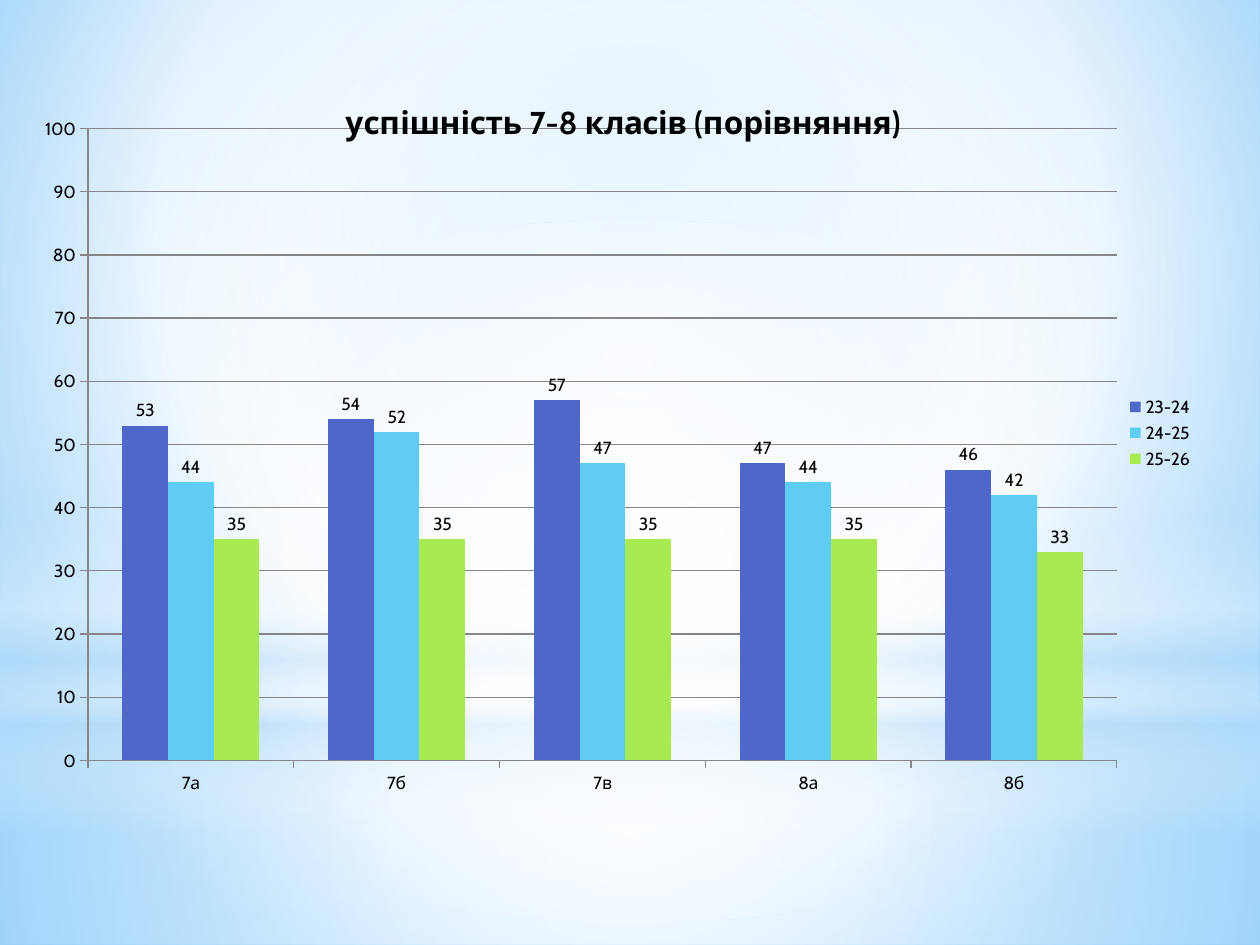
from lxml import etree
from pptx import Presentation
from pptx.chart.data import CategoryChartData
from pptx.dml.color import RGBColor
from pptx.enum.chart import XL_CHART_TYPE, XL_LABEL_POSITION, XL_LEGEND_POSITION, XL_TICK_MARK
from pptx.enum.shapes import MSO_SHAPE
from pptx.oxml import parse_xml
from pptx.oxml.ns import qn
from pptx.util import Cm, Pt

FONT = "Cabin"
COLOURS = {
    "text": "000000", "grid": "868686", "white": "FFFFFF", "haze": "B4DCFA",
    "sky": "9ED5FF", "deep": "5BB9FF",
    "23-24": "4E67C8", "24-25": "5ECCF3", "25-26": "A7EA52",
}
TITLE = "успішність 7-8 класів (порівняння)"
CLASSES = ["7а", "7б", "7в", "8а", "8б"]
RESULTS = {
    "23-24": [53, 54, 57, 47, 46],
    "24-25": [44, 52, 47, 44, 42],
    "25-26": [35, 35, 35, 35, 33],
}

# Gradient stops are (position, colour name, opacity), all in percent.
# A focus is left, top, right, bottom in percent; None means a vertical gradient.
CENTRE = (50, 50, 50, 50)
BACKGROUND = ([(0, "sky", 100), (60, "white", 100), (100, "deep", 100)], (20, 10, 20, 60))
BACKDROP = [  # preset, (left, top, width, height) in cm, stops, focus
    (MSO_SHAPE.RECTANGLE, (0, 14.17, 25.4, 4.88),
     [(0, "white", 91), (37, "white", 76), (100, "haze", 79)], CENTRE),
    (MSO_SHAPE.RECTANGLE, (0, 0, 25.4, 14.17),
     [(0, "white", 89), (48, "white", 62), (100, "haze", 79)], CENTRE),
    (MSO_SHAPE.RECTANGLE, (0, 10.46, 25.4, 6.35),
     [(0, "white", 0), (29, "white", 30), (45, "haze", 40), (55, "white", 26),
      (65, "haze", 60), (100, "white", 0)], None),
    (MSO_SHAPE.OVAL, (0, 4.45, 25.4, 14.17),
     [(0, "white", 100), (56, "white", 0)], CENTRE),
]
CHART_BOX = (0.71, 1.32, 23.6, 14.81)
PLOT_PERCENT = {"x": 4.5, "y": 8.6, "w": 87.9, "h": 86}
TITLE_PERCENT = {"x": 26, "y": 4}


def colour(name):
    return RGBColor.from_string(COLOURS[name])


def apply_gradient(owner, fill, fill_location, stops, focus):
    """Replace the solid fill found at fill_location with a gradient."""
    fill.solid()
    solid = owner.xpath(fill_location + "/a:solidFill")[0]
    gradient = etree.Element(qn("a:gradFill"), rotWithShape="1")
    stop_list = etree.SubElement(gradient, qn("a:gsLst"))
    for position, name, opacity in stops:
        stop = etree.SubElement(stop_list, qn("a:gs"), pos=str(position * 1000))
        tint = etree.SubElement(stop, qn("a:srgbClr"), val=COLOURS[name])
        if opacity < 100:
            etree.SubElement(tint, qn("a:alpha"), val=str(opacity * 1000))
    if focus:
        shade = etree.SubElement(gradient, qn("a:path"), path="circle")
        sides = {side: str(value * 1000) for side, value in zip("ltrb", focus)}
        etree.SubElement(shade, qn("a:fillToRect"), **sides)
    else:
        etree.SubElement(gradient, qn("a:lin"), ang="5400000", scaled="0")
    solid.getparent().replace(solid, parse_xml(etree.tostring(gradient)))


def set_layout(element, index, percents, inner=False):
    """Place a chart part by hand, in percent of the chart's size."""
    for old in element.findall(qn("c:layout")):
        element.remove(old)
    layout = etree.Element(qn("c:layout"))
    manual = etree.SubElement(layout, qn("c:manualLayout"))
    if inner:
        etree.SubElement(manual, qn("c:layoutTarget"), val="inner")
    for key in ("x", "y"):
        etree.SubElement(manual, qn(f"c:{key}Mode"), val="edge")
    for key, value in percents.items():
        etree.SubElement(manual, qn(f"c:{key}"), val=str(round(value / 100, 4)))
    element.insert(index, layout)


def format_font(font, size, bold=False):
    font.name, font.size, font.bold = FONT, Pt(size), bold
    font.color.rgb = colour("text")


def add_backdrop(slide):
    apply_gradient(slide.element, slide.background.fill, ".//p:bgPr", *BACKGROUND)
    for preset, box, stops, focus in BACKDROP:
        shape = slide.shapes.add_shape(preset, *map(Cm, box))
        shape.shadow.inherit = False
        shape.line.fill.background()
        apply_gradient(shape.element, shape.fill, "./p:spPr", stops, focus)


def add_results_chart(slide):
    data = CategoryChartData()
    data.categories = CLASSES
    for year, values in RESULTS.items():
        data.add_series(year, values)
    chart = slide.shapes.add_chart(
        XL_CHART_TYPE.COLUMN_CLUSTERED, *map(Cm, CHART_BOX), data).chart
    format_font(chart.font, 10)

    chart.has_title = True
    paragraph = chart.chart_title.text_frame.paragraphs[0]
    run = paragraph.add_run()
    run.text = TITLE
    format_font(run.font, 18, bold=True)
    title = chart.element.xpath(".//c:chart/c:title")[0]
    set_layout(title, 1, TITLE_PERCENT)
    set_layout(chart.element.xpath(".//c:plotArea")[0], 0, PLOT_PERCENT, inner=True)

    chart.has_legend = True
    chart.legend.position = XL_LEGEND_POSITION.RIGHT
    chart.legend.include_in_layout = False

    value_axis = chart.value_axis
    value_axis.minimum_scale, value_axis.maximum_scale = 0, 100
    value_axis.major_unit = 10
    value_axis.has_major_gridlines = True
    for axis in (chart.category_axis, value_axis):
        axis.major_tick_mark = XL_TICK_MARK.OUTSIDE
        axis.minor_tick_mark = XL_TICK_MARK.NONE
    for line in (value_axis.major_gridlines.format.line, value_axis.format.line,
                 chart.category_axis.format.line):
        line.color.rgb = colour("grid")
        line.width = Pt(0.75)

    plot = chart.plots[0]
    plot.gap_width, plot.overlap = 150, 0
    plot.vary_by_categories = False
    for series in plot.series:
        series.format.fill.solid()
        series.format.fill.fore_color.rgb = colour(series.name)
        series.data_labels.show_value = True
        series.data_labels.position = XL_LABEL_POSITION.OUTSIDE_END


def main():
    presentation = Presentation()
    presentation.slide_width, presentation.slide_height = Cm(25.4), Cm(19.05)
    slide = presentation.slides.add_slide(presentation.slide_layouts[6])
    add_backdrop(slide)
    add_results_chart(slide)
    presentation.save("out.pptx")


if __name__ == "__main__":
    main()
